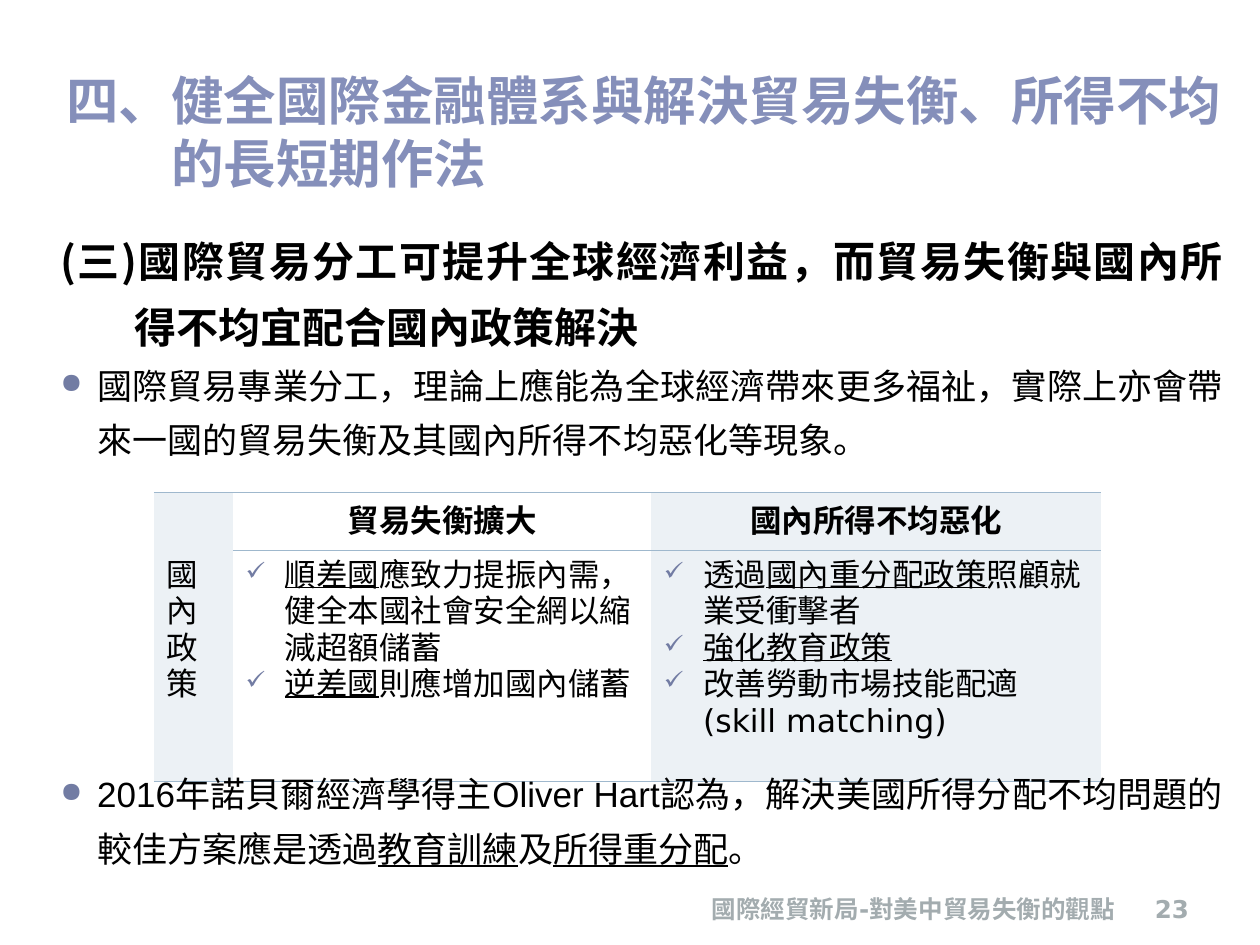
from lxml import etree
from pptx import Presentation
from pptx.dml.color import RGBColor
from pptx.enum.text import MSO_ANCHOR, PP_ALIGN
from pptx.oxml.ns import qn
from pptx.util import Cm, Pt

LEFT, CENTER, RIGHT, JUSTIFY = PP_ALIGN.LEFT, PP_ALIGN.CENTER, PP_ALIGN.RIGHT, PP_ALIGN.JUSTIFY
TOP, MIDDLE, BOTTOM = MSO_ANCHOR.TOP, MSO_ANCHOR.MIDDLE, MSO_ANCHOR.BOTTOM
BLACK, WHITE, TITLE, MARK = "000000", "FFFFFF", "858FBA", "727CA3"
FOOTER, PALE, RULE = "A3ACAF", "ECF1F5", "9FB8CD"


def color(code):
    return RGBColor.from_string(code)


def add_text(para, text, size=18, font="DejaVu Sans", fill=BLACK, bold=False, underline=False):
    span = para.add_run()
    span.text = text
    span.font.size = Pt(size)
    span.font.name = font
    span.font.bold = bold
    span.font.underline = underline
    span.font.color.rgb = color(fill)
    etree.SubElement(span.font._element, qn("a:ea"), typeface=font)


def set_indent(para, indent, hanging, bullet=None):
    settings = para._p.get_or_add_pPr()
    settings.set("marL", str(Cm(indent)))
    settings.set("indent", str(-Cm(hanging)))
    if bullet:
        tint = etree.SubElement(settings, qn("a:buClr"))
        etree.SubElement(tint, qn("a:srgbClr"), val=MARK)
        etree.SubElement(settings, qn("a:buSzPct"), val="80000")
        etree.SubElement(settings, qn("a:buChar"), char=bullet)


def set_borders(cell, ruled):
    settings = cell._tc.get_or_add_tcPr()
    for side in "LRTB":
        line = etree.SubElement(settings, qn(f"a:ln{side}"), w=str(Pt(1)))
        if side in ruled:
            fill = etree.SubElement(line, qn("a:solidFill"))
            etree.SubElement(fill, qn("a:srgbClr"), val=RULE)
        else:
            etree.SubElement(line, qn("a:noFill"))


class SlideBuilder:
    def __init__(self, slide):
        self.slide = slide

    def box(self, left, top, width, height, anchor=TOP, inset=0.25):
        frame = self.slide.shapes.add_textbox(Cm(left), Cm(top), Cm(width), Cm(height)).text_frame
        frame.word_wrap = True
        frame.vertical_anchor = anchor
        frame.margin_left = Cm(inset)
        return frame

    def paragraph(self, frame, spans, align=LEFT, spacing=None, indent=0, hanging=0,
                  bullet=None, **style):
        para = frame.paragraphs[0]
        if para.runs:
            para = frame.add_paragraph()
        para.alignment = align
        if spacing:
            para.line_spacing = spacing
        set_indent(para, indent, hanging, bullet)
        for text, extra in spans:
            add_text(para, text, **{**style, **extra})

    def table(self, left, top, widths, heights, rows, fills):
        table = self.slide.shapes.add_table(
            len(heights), len(widths), Cm(left), Cm(top), Cm(sum(widths)), Cm(sum(heights))).table
        table.first_row = table.horz_banding = False
        for column, width in zip(table.columns, widths):
            column.width = Cm(width)
        for row, height in zip(table.rows, heights):
            row.height = Cm(height)
        for row_index, row in enumerate(rows):
            for column_index, (paragraphs, style) in enumerate(row):
                cell = table.cell(row_index, column_index)
                heading = row_index == 0
                below = "" if heading and column_index == 0 else "B"
                above = "T" if heading or column_index else ""
                set_borders(cell, above + below)
                cell.fill.solid()
                cell.fill.fore_color.rgb = color(fills[column_index])
                cell.vertical_anchor = MIDDLE if heading else TOP
                for spans in paragraphs:
                    self.paragraph(cell.text_frame, spans, **style)


def main():
    deck = Presentation()
    deck.slide_width, deck.slide_height = Cm(25.4), Cm(19.05)
    page = SlideBuilder(deck.slides.add_slide(deck.slide_layouts[6]))
    underlined = {"underline": True}

    title = page.box(1.09, 1.12, 23.8, 2.92, BOTTOM)
    page.paragraph(title, [("四、健全國際金融體系與解決貿易失衡、所得不均的長短期作法", {})],
                   indent=2.11, hanging=2.24, size=30, fill=TITLE, bold=True)

    point = dict(align=JUSTIFY, spacing=1.3, indent=0.74, hanging=0.74, bullet="●", size=20)
    body = page.box(0.71, 4.32, 24.2, 5.4, inset=0.51)
    page.paragraph(body, [("(三)", {"font": "Noto Sans CJK SC"}),
                          ("國際貿易分工可提升全球經濟利益，而貿易失衡與國內所得不均宜配合國內政策解決", {})],
                   align=JUSTIFY, spacing=1.3, indent=1.5, hanging=1.5, size=24, bold=True)
    page.paragraph(body, [("國際貿易專業分工，理論上應能為全球經濟帶來更多福祉，"
                           "實際上亦會帶來一國的貿易失衡及其國內所得不均惡化等現象。", {})], **point)

    heading = dict(align=CENTER, bold=True)
    check = dict(indent=0.79, hanging=0.79, bullet="✓")
    page.table(3.1, 9.93, [1.6, 8.43, 9.07], [1.17, 4.65], [
        [([], {}),
         ([[("貿易失衡擴大", {})]], heading),
         ([[("國內所得不均惡化", {})]], heading)],
        [([[("國內政策", {})]], {}),
         ([[("順差國", underlined), ("應致力提振內需，健全本國社會安全網以縮減超額儲蓄", {})],
           [("逆差國", underlined), ("則應增加國內儲蓄", {})]], check),
         ([[("透過", {}), ("國內重分配政策", underlined), ("照顧就業受衝擊者", {})],
           [("強化教育政策", underlined)],
           [("改善勞動市場技能配適(skill matching)", {})]], check)],
    ], [PALE, WHITE, PALE])

    closing = page.box(0.71, 15.2, 24.2, 2.6, inset=0.51)
    page.paragraph(closing, [
        ("2016年諾貝爾經濟學得主Oliver Hart認為，解決美國所得分配不均問題的較佳方案應是透過", {}),
        ("教育訓練", underlined), ("及", {}), ("所得重分配", underlined), ("。", {})],
        font="Arial", **point)

    footer = dict(size=14, fill=FOOTER, bold=True)
    number = page.box(22.7, 17.73, 1.52, 1.02, BOTTOM)
    page.paragraph(number, [("23", {})], align=RIGHT, **footer)
    source = page.box(14.1, 17.73, 8.89, 1.02, BOTTOM)
    page.paragraph(source, [("國際經貿新局-對美中貿易失衡的觀點", {})], **footer)

    deck.save("out.pptx")


if __name__ == "__main__":
    main()
